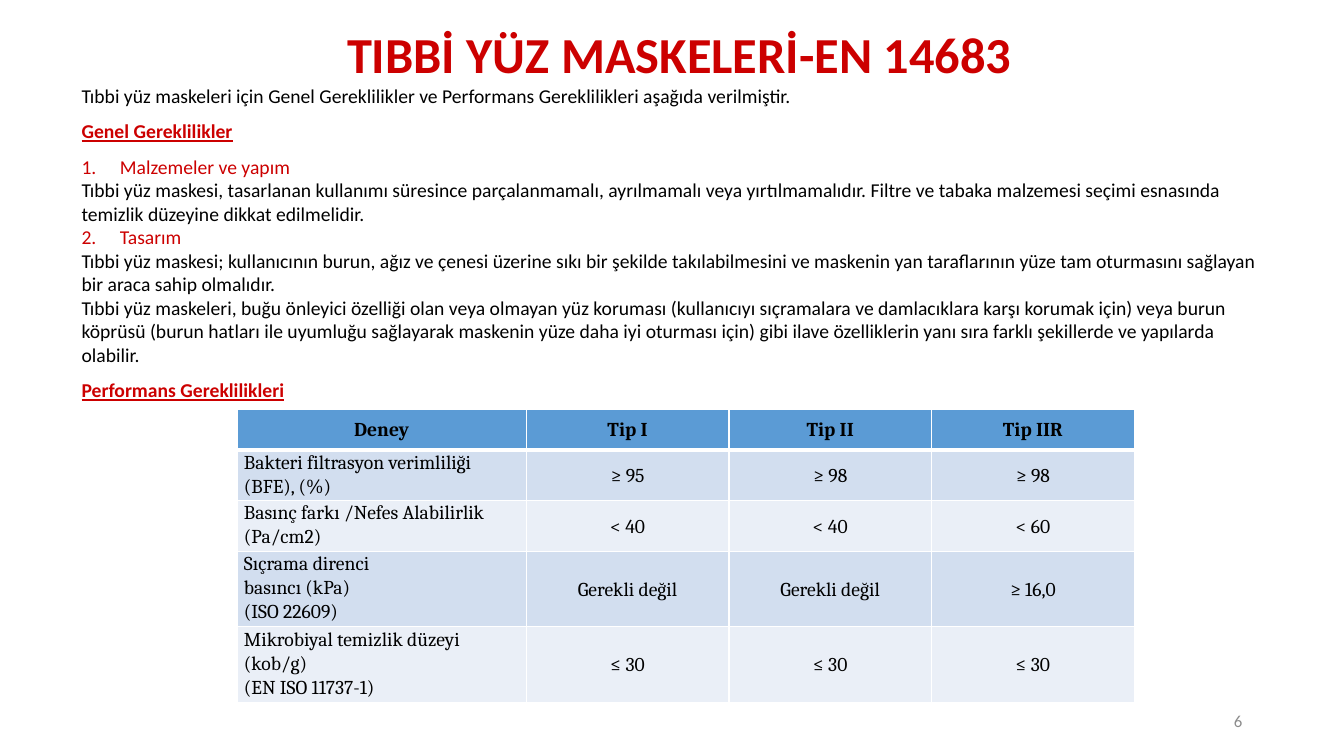
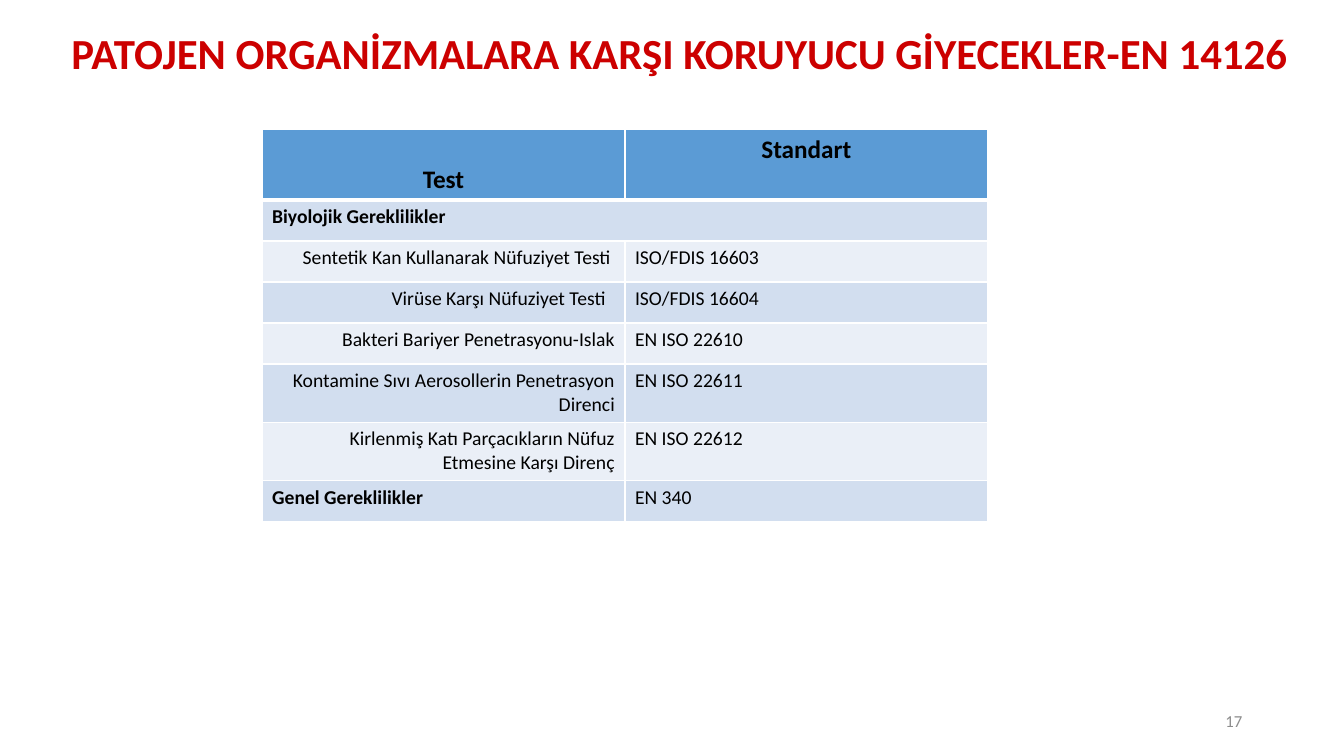
from dataclasses import dataclass

from lxml import etree
from pptx import Presentation
from pptx import util as u
from pptx.dml.color import RGBColor
from pptx.enum import text
from pptx.oxml import ns

LEFT, CENTER, RIGHT = text.PP_ALIGN.LEFT, text.PP_ALIGN.CENTER, text.PP_ALIGN.RIGHT
TOP, MIDDLE, BOTTOM = (text.MSO_ANCHOR.TOP, text.MSO_ANCHOR.MIDDLE,
                       text.MSO_ANCHOR.BOTTOM)
WIDTH, HEIGHT = u.Inches(13.33), u.Inches(7.5)


@dataclass(frozen=True)
class Theme:
    sans: str = "Calibri"
    serif: str = "Cambria"
    red: str = "CC0000"
    black: str = "000000"
    gray: str = "8C8C8C"
    white: str = "FFFFFF"
    header: str = "5B9BD5"
    bands: tuple = ("D2DEEF", "EAEFF7")
    title: float = 36
    long_title: float = 30.6
    table_head: float = 18
    body: float = 14
    number: float = 12
    section_gap: float = 8.5
    thin: float = 1
    thick: float = 3


@dataclass
class Cell:
    words: str
    align: int = LEFT
    anchor: int = TOP
    bold: bool = False
    size: float = Theme.body
    right_inset: float = 0  # inches beyond the table's side margin


@dataclass
class Grid:
    """Table geometry: percentages of the slide, cell margins in inches."""
    left: float
    top: float
    columns: list
    rows: list
    side: float
    edge: float
    font: str
    spacing: float


THEME = Theme()


def across(percent):
    return round(WIDTH * percent / 100)


def down(percent):
    return round(HEIGHT * percent / 100)


def style(para, size, color, bold=False, font=THEME.sans, align=LEFT, spacing=1):
    para.alignment = align
    para.line_spacing = spacing
    para.font.name = font
    para.font.size = u.Pt(size)
    para.font.bold = bold
    para.font.color.rgb = RGBColor.from_string(color)


def add_box(page, left, top, width, height, anchor=TOP):
    box = page.shapes.add_textbox(across(left), down(top), across(width), down(height))
    box.text_frame.word_wrap = True
    box.text_frame.vertical_anchor = anchor
    return box.text_frame


def add_page(deck, title, number, size=THEME.title, spacing=0.9):
    page = deck.slides.add_slide(deck.slide_layouts[6])
    para = add_box(page, 2.63, 2.27, 95.87, 10.67, MIDDLE).paragraphs[0]
    para.text = title
    style(para, size, THEME.red, True, align=CENTER, spacing=spacing)
    para = add_box(page, 70.67, 92.67, 22.5, 5.33, MIDDLE).paragraphs[0]
    para.text = str(number)
    style(para, THEME.number, THEME.gray, align=RIGHT)
    return page


def number_item(para, start):
    properties = para._p.get_or_add_pPr()
    indent = u.Inches(0.38)
    properties.set("marL", str(indent))
    properties.set("indent", str(-indent))
    etree.SubElement(properties, ns.qn("a:buAutoNum"),
                     type="arabicPeriod", startAt=str(start))


def add_requirements(page, entries):
    """Write (kind, words) entries; kind is text, heading or item."""
    frame = add_box(page, 5.33, 10.4, 89.27, 43.73)
    items = 0
    previous = None
    for kind, words in entries:
        para = frame.add_paragraph() if previous else frame.paragraphs[0]
        para.text = words
        if kind == "item":
            items += 1
            number_item(para, items)
        style(para, THEME.body, THEME.black if kind == "text" else THEME.red,
              kind == "heading")
        if kind == "heading":
            para.font.underline = True
        if kind == "heading" or previous == "heading":
            para.space_before = u.Pt(THEME.section_gap)
        previous = kind


def set_borders(cell, row):
    """Thin white lines, with a thick one under the header row."""
    properties = cell._tc.get_or_add_tcPr()
    for side in ("L", "R", "T", "B"):
        under_header = (row, side) in ((0, "B"), (1, "T"))
        width = THEME.thick if under_header else THEME.thin
        line = etree.SubElement(properties, ns.qn(f"a:ln{side}"), w=str(u.Pt(width)))
        fill = etree.SubElement(line, ns.qn("a:solidFill"))
        etree.SubElement(fill, ns.qn("a:srgbClr"), val=THEME.white)


def fill_cell(cell, entry, grid):
    cell.text = entry.words
    cell.vertical_anchor = entry.anchor
    cell.margin_left = u.Inches(grid.side)
    cell.margin_right = u.Inches(grid.side + entry.right_inset)
    cell.margin_top = cell.margin_bottom = u.Inches(grid.edge)
    for para in cell.text_frame.paragraphs:
        style(para, entry.size, THEME.black, entry.bold, grid.font,
              entry.align, grid.spacing)


def add_grid(page, grid, entries):
    """Draw a table; a row shorter than the grid spans its full width."""
    table = page.shapes.add_table(
        len(grid.rows), len(grid.columns), across(grid.left), down(grid.top),
        across(sum(grid.columns)), down(sum(grid.rows))).table
    for column, width in zip(table.columns, grid.columns):
        column.width = across(width)
    for index, (row, height) in enumerate(zip(table.rows, grid.rows)):
        row.height = down(height)
        color = THEME.bands[(index - 1) % 2] if index else THEME.header
        for cell in row.cells:
            set_borders(cell, index)
            cell.fill.solid()
            cell.fill.fore_color.rgb = RGBColor.from_string(color)
        for cell, entry in zip(row.cells, entries[index]):
            fill_cell(cell, entry, grid)
        if len(entries[index]) < len(grid.columns):
            table.cell(index, 0).merge(table.cell(index, len(grid.columns) - 1))


def build_masks(deck):
    page = add_page(deck, "TIBBİ YÜZ MASKELERİ-EN 14683", 6)
    add_requirements(page, [
        ("text", "Tıbbi yüz maskeleri için Genel Gereklilikler ve Performans "
                 "Gereklilikleri aşağıda verilmiştir."),
        ("heading", "Genel Gereklilikler"),
        ("item", "Malzemeler ve yapım"),
        ("text", "Tıbbi yüz maskesi, tasarlanan kullanımı süresince parçalanmamalı, "
                 "ayrılmamalı veya yırtılmamalıdır. Filtre ve tabaka malzemesi seçimi "
                 "esnasında temizlik düzeyine dikkat edilmelidir."),
        ("item", "Tasarım"),
        ("text", "Tıbbi yüz maskesi; kullanıcının burun, ağız ve çenesi üzerine sıkı bir "
                 "şekilde takılabilmesini ve maskenin yan taraflarının yüze tam "
                 "oturmasını sağlayan bir araca sahip olmalıdır."),
        ("text", "Tıbbi yüz maskeleri, buğu önleyici özelliği olan veya olmayan yüz "
                 "koruması (kullanıcıyı sıçramalara ve damlacıklara karşı korumak için) "
                 "veya burun köprüsü (burun hatları ile uyumluğu sağlayarak maskenin "
                 "yüze daha iyi oturması için) gibi ilave özelliklerin yanı sıra farklı "
                 "şekillerde ve yapılarda olabilir."),
        ("heading", "Performans Gereklilikleri"),
    ])
    header = ["Deney", "Tip I", "Tip II", "Tip IIR"]
    tests = [
        ("Bakteri filtrasyon verimliliği (BFE), (%)", "≥ 95", "≥ 98", "≥ 98"),
        ("Basınç farkı /Nefes Alabilirlik\n(Pa/cm2)", "< 40", "< 40", "< 60"),
        ("Sıçrama direnci\nbasıncı (kPa)\n(ISO 22609)",
         "Gerekli değil", "Gerekli değil", "≥ 16,0"),
        ("Mikrobiyal temizlik düzeyi (kob/g)\n(EN ISO 11737-1)",
         "≤ 30", "≤ 30", "≤ 30"),
    ]
    entries = [[Cell(words, CENTER, MIDDLE, True) for words in header]]
    for name, *limits in tests:
        entries.append([Cell(name)] + [Cell(limit, CENTER, MIDDLE) for limit in limits])
    grid = Grid(17.63, 54.13, [21.53] + [15.08] * 3, [5.4, 6.7, 6.7, 10, 10],
                side=0.07, edge=0, font=THEME.serif, spacing=1.07)
    add_grid(page, grid, entries)


def build_clothing(deck):
    page = add_page(deck, "PATOJEN ORGANİZMALARA KARŞI KORUYUCU GİYECEKLER-EN 14126", 17,
                    THEME.long_title, 0.8)
    tests = [
        ("Sentetik Kan Kullanarak Nüfuziyet Testi", "ISO/FDIS 16603", 0.04),
        ("Virüse Karşı Nüfuziyet Testi", "ISO/FDIS 16604", 0.09),
        ("Bakteri Bariyer Penetrasyonu-Islak", "EN ISO 22610", 0),
        ("Kontamine Sıvı Aerosollerin Penetrasyon Direnci", "EN ISO 22611", 0),
        ("Kirlenmiş Katı Parçacıkların Nüfuz Etmesine Karşı Direnç", "EN ISO 22612", 0),
    ]
    entries = [
        [Cell("Test", CENTER, BOTTOM, True, THEME.table_head),
         Cell("Standart", CENTER, TOP, True, THEME.table_head)],
        [Cell("Biyolojik Gereklilikler", bold=True)],
        *[[Cell(name, RIGHT, right_inset=inset), Cell(standard)]
          for name, standard, inset in tests],
        [Cell("Genel Gereklilikler", bold=True), Cell("EN 340")],
    ]
    grid = Grid(19.5, 17.07, [27] * 2, [9.4] + [5.42] * 4 + [7.72] * 2 + [5.42],
                side=0.1, edge=0.05, font=THEME.sans, spacing=1)
    add_grid(page, grid, entries)


def main():
    deck = Presentation()
    deck.slide_width, deck.slide_height = WIDTH, HEIGHT
    build_masks(deck)
    build_clothing(deck)
    deck.save("out.pptx")


if __name__ == "__main__":
    main()
